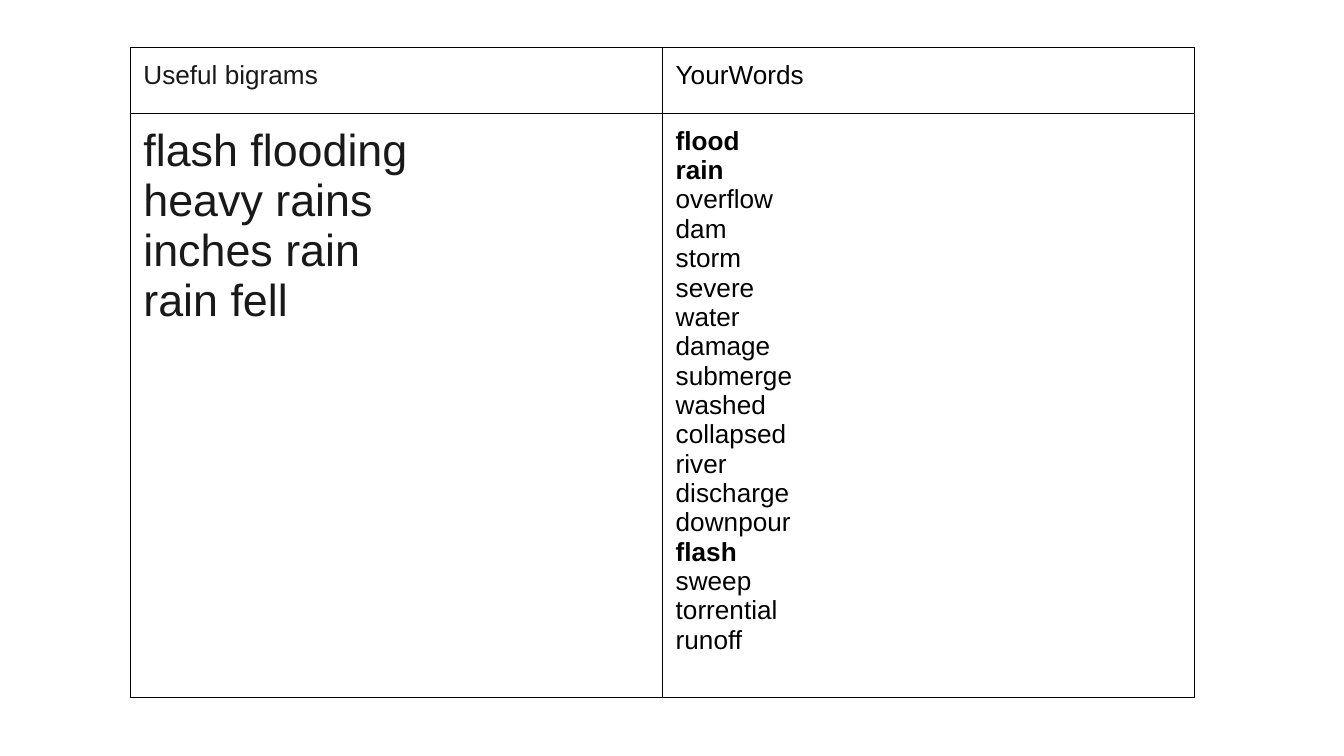
from lxml import etree
from pptx import Presentation
from pptx.dml.color import RGBColor
from pptx.oxml.ns import qn
from pptx.util import Cm, Pt

# Content: each cell is a list of paragraphs, each paragraph a list of lines
HEADERS = ["Useful bigrams", "YourWords"]
BIGRAMS = ["flash flooding", "heavy rains", "inches rain", "rain fell"]
WORDS = ["flood", "rain", "overflow", "dam", "storm", "severe", "water",
         "damage", "submerge", "washed", "collapsed", "river", "discharge",
         "downpour", "flash", "sweep", "torrential", "runoff"]
KEY_WORDS = {"flood", "rain", "flash"}

THEME = {
    "font": "Arial",
    "dark": RGBColor(0x19, 0x19, 0x19),
    "black": RGBColor(0, 0, 0),
    "border": "000000",
    "border_width": Pt(0.75),
    "body": Pt(14),
    "large": Pt(24),
}
LEFT, TOP = Cm(2.46), Cm(0.9)
COL_WIDTH = Cm(10.06)
ROW_HEIGHTS = [Cm(1.24), Cm(11.05)]
MARGIN = Cm(0.25)


def set_borders(cell):
    tcPr = cell._tc.get_or_add_tcPr()
    for i, side in enumerate(("a:lnL", "a:lnR", "a:lnT", "a:lnB")):
        ln = etree.Element(qn(side), w=str(THEME["border_width"]))
        fill = etree.SubElement(ln, qn("a:solidFill"))
        etree.SubElement(fill, qn("a:srgbClr"), val=THEME["border"])
        tcPr.insert(i, ln)


def fill_cell(cell, paragraphs, size, color):
    cell.margin_left = cell.margin_right = MARGIN
    cell.margin_top = cell.margin_bottom = MARGIN
    cell.fill.background()
    set_borders(cell)
    tf = cell.text_frame
    for i, lines in enumerate(paragraphs):
        p = tf.add_paragraph() if i else tf.paragraphs[0]
        for j, line in enumerate(lines):
            if j:
                p.add_line_break()
            r = p.add_run()
            r.text = line
            r.font.name = THEME["font"]
            r.font.size = size
            r.font.bold = line in KEY_WORDS
            r.font.color.rgb = color


prs = Presentation()
prs.slide_width, prs.slide_height = Cm(25.4), Cm(14.29)
s = prs.slides.add_slide(prs.slide_layouts[6])

# Two-column table
table = s.shapes.add_table(2, 2, LEFT, TOP, 2 * COL_WIDTH,
                           sum(ROW_HEIGHTS)).table
table.first_row = table.horz_banding = False
for col in table.columns:
    col.width = COL_WIDTH
for row, height in zip(table.rows, ROW_HEIGHTS):
    row.height = height

# Header row
for c, (header, color) in enumerate(zip(HEADERS, (THEME["dark"], THEME["black"]))):
    fill_cell(table.cell(0, c), [[header]], THEME["body"], color)

# Body row: bigrams share one paragraph, words have one each
fill_cell(table.cell(1, 0), [BIGRAMS], THEME["large"], THEME["dark"])
fill_cell(table.cell(1, 1), [[word] for word in WORDS], THEME["body"], THEME["black"])

prs.save("out.pptx")
